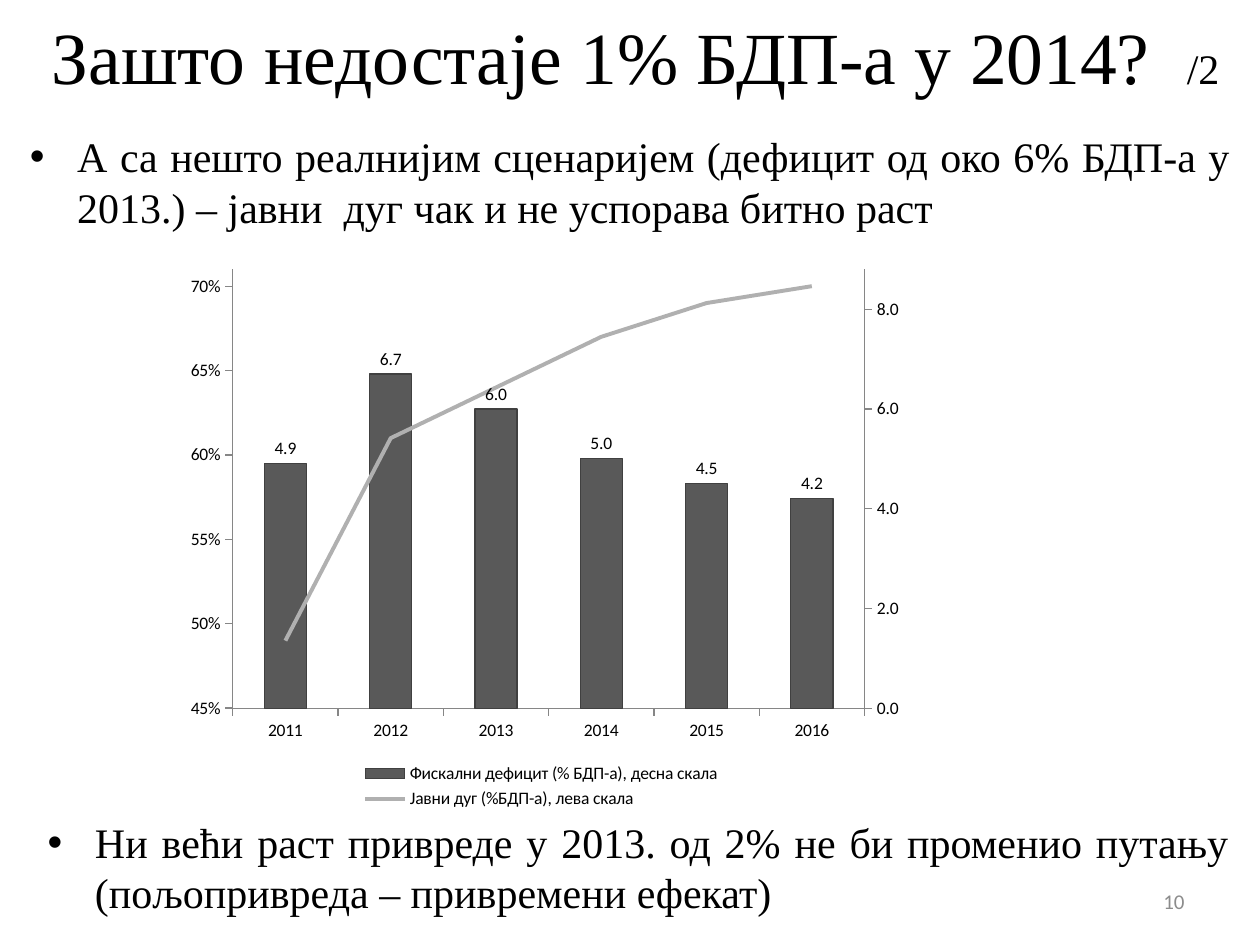
from copy import deepcopy
from typing import NamedTuple

from lxml.etree import SubElement
from pptx import Presentation
from pptx.chart.data import CategoryChartData as ChartData
from pptx.dml.color import RGBColor
from pptx.enum.chart import XL_CHART_TYPE as Kind, XL_LABEL_POSITION as Spot
from pptx.enum.chart import XL_LEGEND_POSITION as Side, XL_TICK_MARK as Tick
from pptx.enum.chart import XL_MARKER_STYLE as Mark
from pptx.enum.text import MSO_ANCHOR as Anchor, PP_ALIGN as Align
from pptx.oxml import parse_xml
from pptx.oxml.ns import nsdecls, qn
from pptx.util import Pt

SERIF, SANS = "Times New Roman", "Calibri"
BLACK, GREY, AXIS = "000000", "8C8C8C", "868686"


class Box(NamedTuple):
    left: float
    top: float
    width: float
    height: float

    def points(self) -> list:
        return [Pt(v) for v in self]


class Bullet(NamedTuple):
    box: Box
    text: str


class Scale(NamedTuple):
    low: float
    high: float
    step: float
    form: str


BULLETS = [
    Bullet(Box(10, 71.3, 700, 124.5),
           "А са нешто реалнијим сценаријем (дефицит од око 6% БДП-а у 2013.)"
           " – јавни  дуг чак и не успорава битно раст"),
    Bullet(Box(20.2, 463, 689, 62.6),
           "Ни већи раст привреде у 2013. од 2% не би променио путању"
           " (пољопривреда – привремени ефекат)"),
]
YEARS = ["2011", "2012", "2013", "2014", "2015", "2016"]
DEFICIT = [4.9, 6.7, 6.0, 5.0, 4.5, 4.2]
DEBT = [0.49, 0.61, 0.64, 0.67, 0.69, 0.70]


def color(code: str) -> RGBColor:
    return RGBColor.from_string(code)


def style(font, size: float, name: str, code: str = BLACK) -> None:
    font.size, font.name = Pt(size), name
    font.color.rgb = color(code)


def add_text(slide, box: Box, text: str):
    frame = slide.shapes.add_textbox(*box.points()).text_frame
    frame.word_wrap = True
    frame.text = text
    return frame


def add_bullet(slide, item: Bullet) -> None:
    para = add_text(slide, item.box, item.text).paragraphs[0]
    para.alignment = Align.JUSTIFY
    para.space_before = para.space_after = Pt(3)
    style(para.runs[0].font, 24, SERIF)
    props = para._p.get_or_add_pPr()
    props.set("marL", str(Pt(27)))
    props.set("indent", str(-Pt(27)))
    SubElement(props, qn("a:buFont")).set("typeface", "Arial")
    SubElement(props, qn("a:buChar")).set("char", "•")


def set_scale(axis, scale: Scale) -> None:
    axis.minimum_scale, axis.maximum_scale = scale.low, scale.high
    axis.major_unit = scale.step
    axis.has_major_gridlines = False
    axis.major_tick_mark = Tick.OUTSIDE
    axis.tick_labels.number_format = scale.form
    axis.tick_labels.number_format_is_linked = False
    axis.format.line.color.rgb = color(AXIS)


def set_child(axis, tag: str, value: str) -> None:
    axis.find(qn(tag)).set("val", value)


def drop(parent, tag: str) -> None:
    for old in parent.findall(qn(tag)):
        parent.remove(old)


def layout(box: Box, inner: bool = False):
    """Manual placing, in shares of the chart's size."""
    target = '<c:layoutTarget val="inner"/>' if inner else ""
    sizes = "".join(f'<c:{k} val="{v}"/>' for k, v in zip("xywh", box))
    return parse_xml(
        f'<c:layout {nsdecls("c")}><c:manualLayout>{target}'
        '<c:xMode val="edge"/><c:yMode val="edge"/>'
        f'{sizes}</c:manualLayout></c:layout>')


def split_line(chart) -> None:
    """Turn the second series into a line on an axis pair of its own."""
    area = chart._chartSpace.chart.plotArea
    bars = area.find(qn("c:barChart"))
    debt = bars.findall(qn("c:ser"))[1]
    drop(debt, "c:invertIfNegative")
    group = parse_xml(
        f'<c:lineChart {nsdecls("c")}><c:grouping val="standard"/>'
        '<c:varyColors val="0"/><c:marker val="1"/>'
        '<c:axId val="501"/><c:axId val="502"/></c:lineChart>')
    group.insert(2, debt)
    bars.addnext(group)
    line = chart.plots[1].series[0]
    line.smooth = False
    line.marker.style = Mark.NONE
    line.format.line.width = Pt(2.25)
    line.format.line.color.rgb = color("B0B0B0")

    cats, vals = area.find(qn("c:catAx")), area.find(qn("c:valAx"))
    vals2, cats2 = deepcopy(vals), deepcopy(cats)
    vals.addnext(vals2)
    vals2.addnext(cats2)
    for axis, own, other in ((cats2, "501", "502"), (vals2, "502", "501")):
        set_child(axis, "c:axId", own)
        set_child(axis, "c:crossAx", other)
    set_child(cats2, "c:delete", "1")
    set_child(vals, "c:crosses", "max")
    set_child(vals, "c:axPos", "r")
    left = type(chart.value_axis)(vals2)
    set_scale(left, Scale(0.45, 0.71, 0.05, "0%"))


def add_combo(slide, box: Box) -> None:
    data = ChartData(number_format="0.0")
    data.categories = YEARS
    data.add_series("Фискални дефицит (% БДП-а), десна скала", DEFICIT)
    data.add_series("Јавни дуг (%БДП-а), лева скала", DEBT, "0%")
    chart = slide.shapes.add_chart(
        Kind.COLUMN_CLUSTERED, *box.points(), data).chart
    style(chart.font, 10, SANS)
    chart.has_title = False

    # Bars and their labels
    plot = chart.plots[0]
    plot.gap_width, plot.vary_by_categories = 150, False
    bars = plot.series[0]
    bars.format.fill.solid()
    bars.format.fill.fore_color.rgb = color("595959")
    bars.format.line.color.rgb = color("404040")
    bars.format.line.width = Pt(0.75)
    labels = bars.data_labels
    labels.show_value, labels.position = True, Spot.OUTSIDE_END
    labels.number_format, labels.number_format_is_linked = "0.0", False

    # Axes and the debt line
    chart.category_axis.format.line.color.rgb = color(AXIS)
    chart.category_axis.major_tick_mark = Tick.OUTSIDE
    set_scale(chart.value_axis, Scale(0, 8.8, 2, "0.0"))
    split_line(chart)

    # Legend and placing
    chart.has_legend = True
    legend = chart.legend
    legend.position, legend.include_in_layout = Side.BOTTOM, False
    style(legend.font, 10, SANS)
    area = chart._chartSpace.chart.plotArea
    drop(area, "c:layout")
    area.insert(0, layout(Box(0.08, 0.02, 0.86, 0.79), inner=True))
    root = legend._element
    drop(root, "c:layout")
    root.find(qn("c:legendPos")).addnext(layout(Box(0.25, 0.9, 0.5, 0.1)))


def main() -> None:
    deck = Presentation()
    deck.slide_width, deck.slide_height = Pt(720), Pt(540)
    slide = deck.slides.add_slide(deck.slide_layouts[5])

    # Title
    title = slide.shapes.title
    title.left, title.top, title.width, title.height = Box(
        14.4, -2.2, 697.7, 67.7).points()
    frame = title.text_frame
    frame.vertical_anchor = Anchor.MIDDLE
    para = frame.paragraphs[0]
    para.alignment = Align.CENTER
    for text, size in (("Зашто недостаје 1% БДП-а у 2014?  ", 42), ("/2", 24)):
        run = para.add_run()
        run.text = text
        style(run.font, size, SERIF)

    # Body, chart and page number
    for item in BULLETS:
        add_bullet(slide, item)
    add_combo(slide, Box(99.4, 147.6, 419.8, 317.5))
    frame = add_text(slide, Box(516.2, 500.4, 167.8, 28.8), "10")
    frame.vertical_anchor = Anchor.MIDDLE
    frame.paragraphs[0].alignment = Align.RIGHT
    style(frame.paragraphs[0].runs[0].font, 12, SANS, GREY)

    deck.save("out.pptx")


if __name__ == "__main__":
    main()
